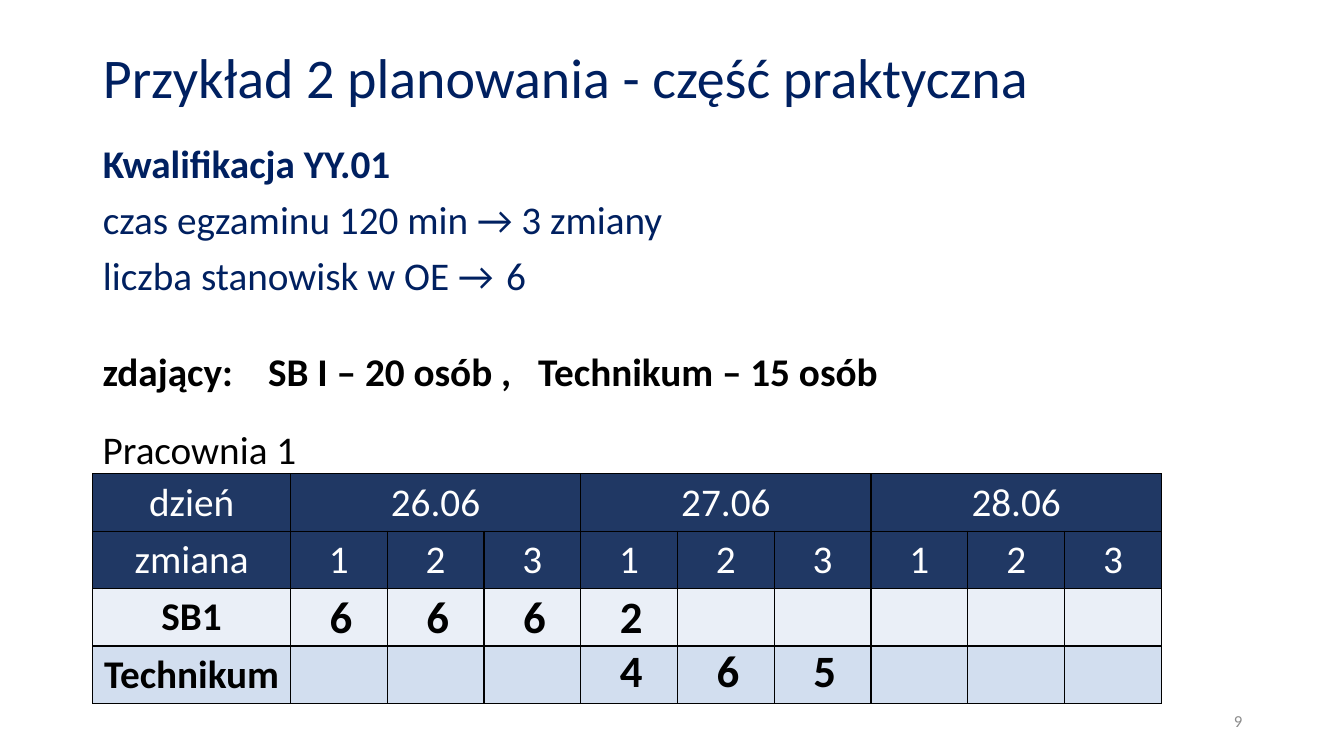
from lxml import etree
from pptx import Presentation
from pptx.dml.color import RGBColor
from pptx.enum.text import MSO_ANCHOR, MSO_AUTO_SIZE, PP_ALIGN
from pptx.oxml.ns import qn
from pptx.util import Inches, Pt

LEFT, MID, RIGHT = PP_ALIGN.LEFT, PP_ALIGN.CENTER, PP_ALIGN.RIGHT
CENTRE, TOP = MSO_ANCHOR.MIDDLE, MSO_ANCHOR.TOP
FIXED = MSO_AUTO_SIZE.NONE

NAVY = RGBColor(0x00, 0x20, 0x60)
HEAD = RGBColor(0x20, 0x38, 0x64)
PALE = RGBColor(0xEA, 0xEF, 0xF7)
BLUE = RGBColor(0xD2, 0xDE, 0xEF)
GREY = RGBColor(0x8C, 0x8C, 0x8C)
BLACK = RGBColor(0, 0, 0)
WHITE = RGBColor(255, 255, 255)

TITLE = "Przykład 2 planowania - część praktyczna"
FACTS = [
    ("Kwalifikacja YY.01", True, ()),
    ("czas egzaminu 120 min → 3 zmiany", False, ()),
    ("liczba stanowisk w OE →\t6", False, (4.05,)),
]
TAKERS = "zdający:\tSB I – 20 osób ,\tTechnikum – 15 osób"
ROOM = "Pracownia 1"
PAGE = "9"
DAYS = ["26.06", "27.06", "28.06"]
SHIFTS = ["1", "2", "3"]
LABELS = ["dzień", "zmiana", "SB1", "Technikum"]
FILLS = [HEAD, HEAD, PALE, BLUE]
PLAN = [(5.79, 0, "6662"), (6.33, 3, "465")]

EDGE, WIDE = 0.92, 11.5
FIRST, STEP = 1.96, 0.96
GRID, ROW = 4.7, 0.57
BOX, NUDGE = 0.46, 0.04


def style(para, size, color, bold=False, align=LEFT, tabs=()):
    props = para._p.get_or_add_pPr()
    if tabs:
        stops = etree.SubElement(props, qn("a:tabLst"))
        for stop in tabs:
            etree.SubElement(stops, qn("a:tab"), pos=str(Inches(stop)), algn="l")
    para.alignment = align
    font = para.font
    font.name, font.size, font.bold = "Calibri", Pt(size), bold
    font.color.rgb = color


def place(shape, left, top, width, height):
    shape.left, shape.top = Inches(left), Inches(top)
    shape.width, shape.height = Inches(width), Inches(height)


def label(slide, text, spot, size, color, bold=False, align=LEFT, anchor=TOP, tabs=()):
    frame = slide.shapes.add_textbox(*map(Inches, spot)).text_frame
    frame.word_wrap = True
    frame.vertical_anchor = anchor
    frame.text = text
    style(frame.paragraphs[0], size, color, bold, align, tabs)


def border(cell):
    props = cell._tc.get_or_add_tcPr()
    for n, side in enumerate(("lnL", "lnR", "lnT", "lnB")):
        line = etree.Element(qn("a:" + side), w=str(Pt(1)))
        fill = etree.SubElement(line, qn("a:solidFill"))
        etree.SubElement(fill, qn("a:srgbClr"), val=str(BLACK))
        props.insert(n, line)


def write(cell, text, color, bold=False):
    cell.text = text
    style(cell.text_frame.paragraphs[0], 28, color, bold, MID)


def heads(slide):
    title, body = slide.placeholders
    place(title, EDGE, 0.4, WIDE, 0.79)
    frame = title.text_frame
    frame.text, frame.vertical_anchor, frame.auto_size = TITLE, CENTRE, FIXED
    para = frame.paragraphs[0]
    style(para, 40, NAVY)
    para.line_spacing = 0.9

    place(body, EDGE, 1.38, WIDE, 1.83)
    frame = body.text_frame
    frame.auto_size = FIXED
    frame.text = "\n".join(text for text, _, _ in FACTS)
    for para, (_, bold, tabs) in zip(frame.paragraphs, FACTS):
        props = para._p.get_or_add_pPr()
        props.set("marL", "0")
        props.set("indent", "0")
        etree.SubElement(props, qn("a:buNone"))
        style(para, 28, NAVY, bold, tabs=tabs)
        para.line_spacing, para.space_before = 0.9, Pt(10)


def grid(slide):
    span = len(SHIFTS)
    count = span * len(DAYS)
    rows = len(LABELS)
    table = slide.shapes.add_table(
        rows, count + 1, Inches(EDGE), Inches(GRID),
        Inches(FIRST + STEP * count), Inches(ROW * rows)).table
    for n, col in enumerate(table.columns):
        col.width = Inches(STEP if n else FIRST)
    for r, (text, fill) in enumerate(zip(LABELS, FILLS)):
        table.rows[r].height = Inches(ROW)
        for cell in table.rows[r].cells:
            cell.fill.solid()
            cell.fill.fore_color.rgb = fill
            border(cell)
        light = fill != HEAD
        write(table.cell(r, 0), text, BLACK if light else WHITE, light)
    for d, day in enumerate(DAYS):
        start = 1 + d * span
        table.cell(0, start).merge(table.cell(0, start + span - 1))
        write(table.cell(0, start), day, WHITE)
        for s, shift in enumerate(SHIFTS):
            write(table.cell(1, start + s), shift, WHITE)


def main():
    deck = Presentation()
    deck.slide_width, deck.slide_height = Inches(13.33), Inches(7.5)
    slide = deck.slides.add_slide(deck.slide_layouts[1])
    heads(slide)
    label(slide, PAGE, (9.42, 6.95, 3, 0.4), 12, GREY, align=RIGHT, anchor=CENTRE)
    grid(slide)
    label(slide, TAKERS, (EDGE, 3.4, WIDE, 0.57), 28, BLACK, True, tabs=(1.64, 4.32))
    label(slide, ROOM, (EDGE, 4.17, 3.78, 0.57), 28, BLACK)
    start = EDGE + FIRST + (STEP - BOX) / 2 + NUDGE
    for top, skip, seats in PLAN:
        for n, seat in enumerate(seats, skip):
            label(slide, seat, (start + n * STEP, top, BOX, 0.64), 32, BLACK, True)
    deck.save("out.pptx")


if __name__ == "__main__":
    main()
